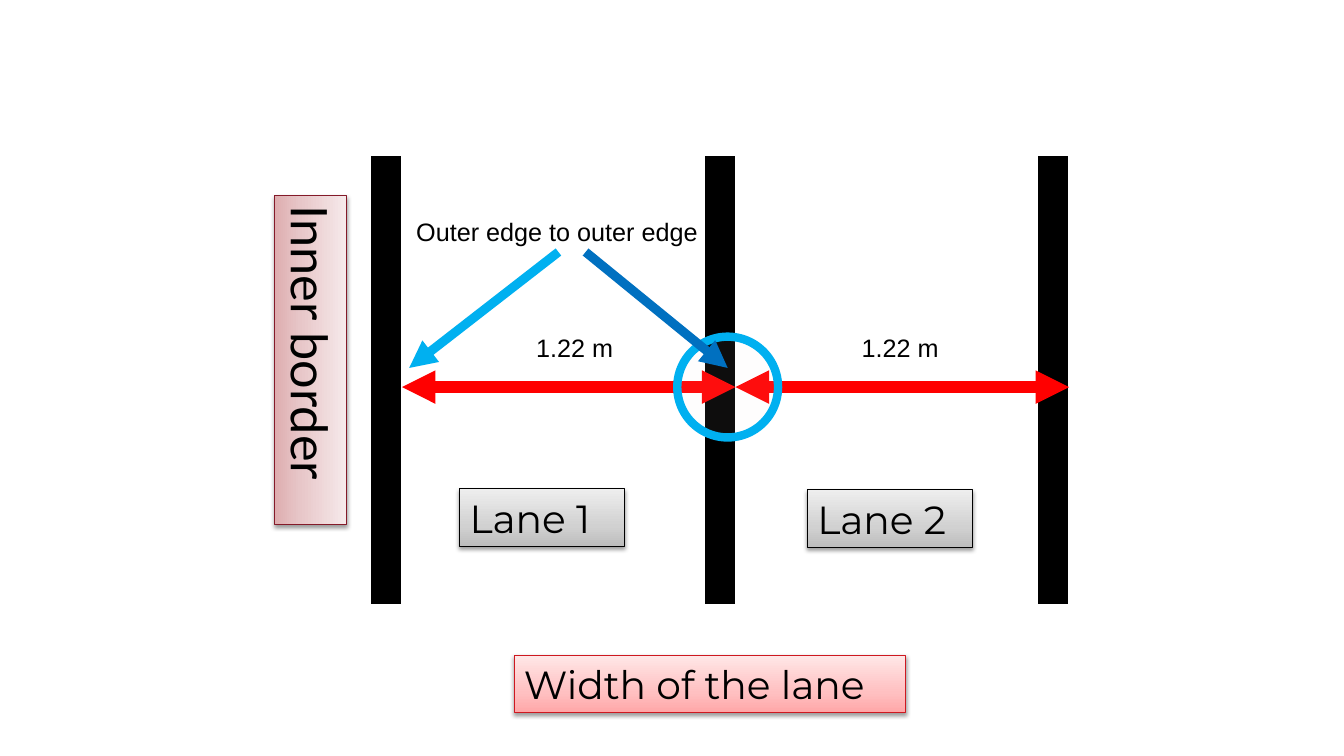
from lxml import etree
from pptx import Presentation
from pptx.dml.color import RGBColor
from pptx.enum.shapes import MSO_CONNECTOR, MSO_SHAPE
from pptx.enum.text import MSO_ANCHOR, PP_ALIGN
from pptx.oxml import parse_xml
from pptx.oxml.ns import qn
from pptx.util import Pt

LINE = MSO_CONNECTOR.STRAIGHT
RECT = MSO_SHAPE.RECTANGLE
OVAL = MSO_SHAPE.OVAL
TOP = MSO_ANCHOR.TOP
LEFT = PP_ALIGN.LEFT
NS = 'xmlns:a="http://schemas.openxmlformats.org/drawingml/2006/main"'

GREY = ("BDBDBD", "D1D1D1", "EEEEEE")
PINK = ("FFA6A7", "FFC0C1", "FFE7E7")
ROSE = ("DEADAF", "E7C6C8", "F6E9EA")
BLACK, RED, SKY, BLUE = "000000", "FF0000", "00B0F0", "0070C0"


def rgb(code):
    return RGBColor.from_string(code)


class Board:
    font = "Montserrat"
    plain = "Arial"

    def __init__(self, slide):
        self.shapes = slide.shapes

    def line(self, start, end, color, width, heads=()):
        """Draw a line; heads names the ends with arrows (headEnd, tailEnd)."""
        bar = self.shapes.add_connector(LINE, *map(Pt, start + end))
        bar.line.color.rgb = rgb(color)
        bar.line.width = Pt(width)
        ln = bar._element.spPr.find(qn("a:ln"))
        for head in heads:
            etree.SubElement(ln, qn("a:" + head), type="triangle")
        etree.SubElement(bar._element.spPr, qn("a:effectLst"))

    def label(self, shape, text, size, font, wrap):
        frame = shape.text_frame
        frame.text = text
        frame.word_wrap = wrap
        frame.vertical_anchor = TOP
        par = frame.paragraphs[0]
        par.alignment = LEFT
        face = par.runs[0].font
        face.name, face.size = font, Pt(size)
        face.color.rgb = rgb(BLACK)

    def text(self, x, y, w, h, text):
        box = self.shapes.add_textbox(*map(Pt, (x, y, w, h)))
        self.label(box, text, 18, self.plain, False)

    def plate(self, x, y, w, h, text, shades, edge, size=28, font=None, turn=0):
        """Draw a label with a bottom-to-top gradient and a soft shadow."""
        box = self.shapes.add_shape(RECT, *map(Pt, (x, y, w, h)))
        box.rotation = turn
        box.line.color.rgb = rgb(edge)
        box.line.width = Pt(0.75)
        box.fill.background()
        stops = "".join(
            f'<a:gs pos="{pos}"><a:srgbClr val="{shade}"/></a:gs>'
            for pos, shade in zip((0, 35000, 100000), shades))
        props = box._element.spPr
        props.replace(props.find(qn("a:noFill")), parse_xml(
            f'<a:gradFill {NS} rotWithShape="1"><a:gsLst>{stops}</a:gsLst>'
            '<a:lin ang="16200000" scaled="1"/></a:gradFill>'))
        box.shadow.inherit = False
        props.find(qn("a:effectLst")).append(parse_xml(
            f'<a:outerShdw {NS} blurRad="{Pt(3.1)}" dist="{Pt(1.6)}" '
            'dir="5400000" rotWithShape="0"><a:srgbClr val="000000">'
            '<a:alpha val="38000"/></a:srgbClr></a:outerShdw>'))
        self.label(box, text, size, font or self.font, True)

    def ring(self, x, y, size, color, width, tint):
        """Draw a circle with an almost clear fill."""
        disc = self.shapes.add_shape(OVAL, Pt(x), Pt(y), Pt(size), Pt(size))
        disc.shadow.inherit = False
        disc.line.color.rgb = rgb(color)
        disc.line.width = Pt(width)
        disc.fill.solid()
        disc.fill.fore_color.rgb = rgb(tint)
        clr = disc._element.spPr.find(qn("a:solidFill"))[0]
        etree.SubElement(clr, qn("a:alpha"), val="6000")


def main():
    deck = Presentation()
    deck.slide_width, deck.slide_height = Pt(960), Pt(540)
    board = Board(deck.slides.add_slide(deck.slide_layouts[6]))

    first, step, half = 275.8, 238.3, 11.3
    bars = [first + i * step for i in range(3)]
    for x in bars:
        board.line((x, 111.6), (x, 431.3), BLACK, 21.25)
    for left, right in zip(bars, bars[1:]):
        board.line((left + half, 276.5), (right + half, 276.5), RED, 8,
                   ("headEnd", "tailEnd"))

    lanes = ((328.3, 349.2, 375.8), (576.7, 349.9, 608.4))
    for num, (x, y, mark) in enumerate(lanes, 1):
        board.plate(x, y, 118, 41.2, f"Lane {num}", GREY, BLACK)
        board.text(mark, 234, 70, 29, "1.22 m")
    board.plate(367.2, 468, 279.4, 41.2, "Width of the lane", PINK, "CE1820")
    board.plate(104.4, 231.8, 234.7, 51.1, "Inner border", ROSE, "841A29",
                36, "Lato", 90)

    board.ring(483.8, 240.5, 72, SKY, 6, "F9E5E8")
    board.text(290.2, 151.2, 217.4, 29, "Outer edge to outer edge")
    board.line((398.9, 180), (292.3, 262.8), SKY, 6.5, ("tailEnd",))
    board.line((418.3, 180), (519.8, 262.8), BLUE, 6.5, ("tailEnd",))
    deck.save("out.pptx")


if __name__ == "__main__":
    main()
